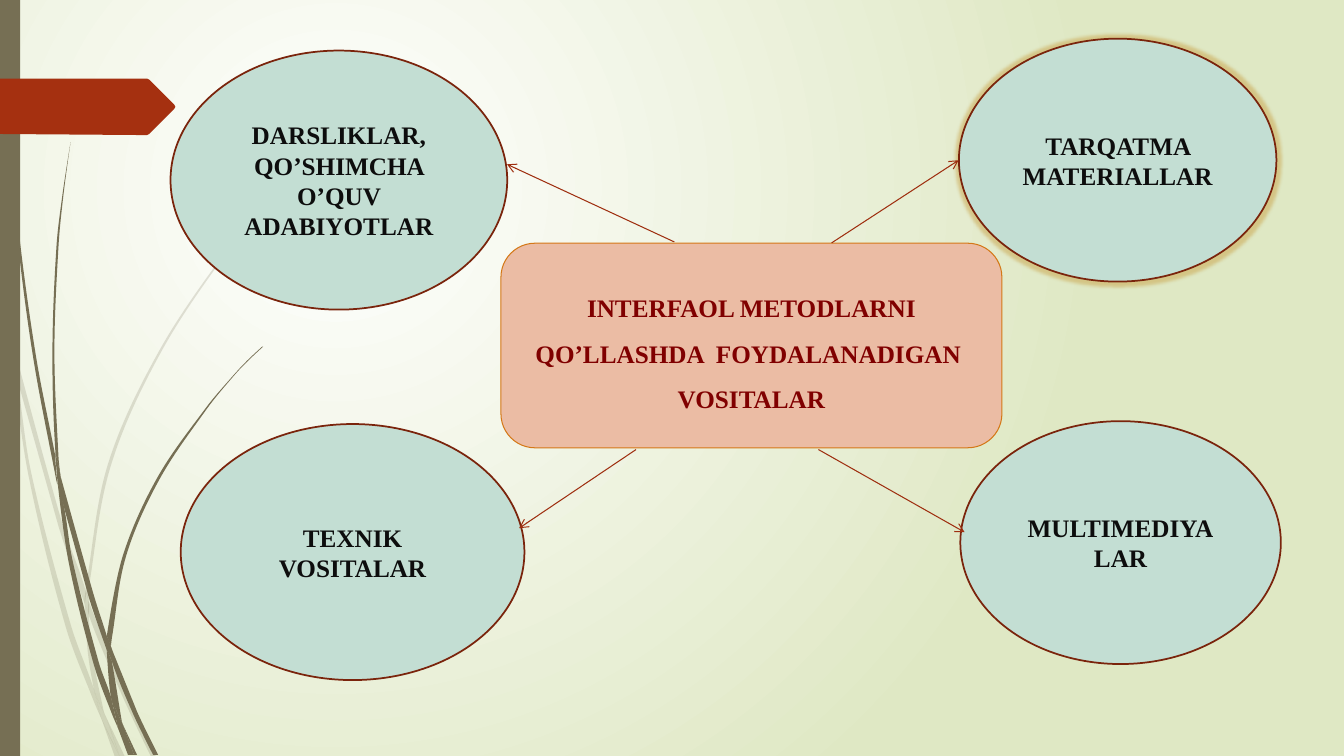
from dataclasses import dataclass
from math import hypot

from lxml.etree import SubElement
from pptx import Presentation
from pptx.dml.color import RGBColor
from pptx.enum.shapes import MSO_CONNECTOR, MSO_SHAPE
from pptx.enum.text import MSO_ANCHOR, PP_ALIGN
from pptx.oxml.ns import qn
from pptx.util import Inches, Pt

COL = ROW = Inches(0.01)
COLS, ROWS = 1333.33, 750
FONT = "Times New Roman"
COLORS = {
    "white": "FFFFFF", "pale": "DFE8C4", "stem": "766F54", "tag": "A53010",
    "topic": "EBBCA4", "topic_edge": "D47817", "topic_text": "800000",
    "tool": "C3DED3", "tool_edge": "7A240C", "tool_text": "0D0D0D",
    "arrow": "9E2E0F", "glow": "CDAE5C",
}
Point = tuple[float, float]


@dataclass(frozen=True)
class Box:
    col: float
    row: float
    cols: float
    rows: float
    kind: MSO_SHAPE
    role: str
    text: str = ""
    edge: float = 0
    spacing: float = 1
    glow: bool = False


@dataclass(frozen=True)
class Outline:
    points: tuple[Point, ...]
    role: str = "stem"
    opacity: int = 100


@dataclass(frozen=True)
class Arrow:
    start: Point
    end: Point


PALE_STEMS = (
    ((11, 350), (9, 322), (0, 282), (0, 299), (10, 344)),
    ((58, 522), (84, 599), (85, 586), (62, 520), (14, 345), (17, 376)),
    ((92, 607), (88, 596), (88, 610), (123, 694), (150, 751), (155, 751), (127, 692)),
    ((119, 751), (124, 751), (105, 711)),
    ((93, 683), (70, 619), (31, 469), (17, 376), (11, 350), (28, 470), (65, 621),
     (92, 693), (101, 714), (99, 707)),
    ((84, 599), (87, 646), (93, 683), (96, 692), (105, 711), (103, 706), (91, 646),
     (88, 610), (88, 608)),
    ((88, 584), (110, 462), (160, 349), (229, 245), (268, 198), (290, 175), (312, 154),
     (312, 153), (289, 175), (268, 197), (228, 244), (158, 348), (107, 461), (85, 584),
     (85, 586), (88, 596)),
    ((101, 714), (114, 751), (119, 751)),
    ((88, 608), (88, 610), (88, 596), (85, 586), (84, 599)),
    ((96, 692), (93, 683), (99, 707), (101, 714), (119, 751), (105, 711)),
)
DARK_STEMS = (
    ((7, 110), (17, 233), (33, 355), (56, 477), (57, 481), (55, 457), (55, 453), (36, 355),
     (19, 232), (8, 109), (5, 48), (4, 0), (3, 0), (4, 48)),
    ((88, 592), (106, 645), (106, 633), (106, 631), (93, 590), (60, 472), (64, 505)),
    ((113, 649), (110, 641), (111, 656), (132, 708), (152, 749), (157, 749), (136, 706)),
    ((110, 691), (98, 657), (72, 556), (64, 505), (57, 477), (68, 557), (93, 659),
     (111, 708), (117, 722), (116, 717)),
    ((60, 472), (58, 453), (54, 349), (58, 245), (63, 193), (70, 141), (62, 193), (56, 245),
     (52, 349), (55, 449)),
    ((133, 749), (136, 749), (122, 719)),
    ((57, 477), (64, 505), (60, 472), (55, 449), (55, 453)),
    ((111, 633), (125, 552), (158, 476), (205, 406), (231, 374), (245, 359), (261, 344),
     (260, 344), (245, 358), (231, 373), (204, 405), (156, 474), (122, 551), (106, 631),
     (110, 641)),
    ((117, 722), (127, 749), (131, 749)),
    ((106, 645), (110, 691), (116, 706), (122, 719), (121, 716), (111, 656), (109, 651)),
    ((106, 645), (109, 651), (111, 656), (110, 641), (106, 631), (106, 633)),
    ((116, 706), (110, 691), (116, 717), (117, 722), (130, 749), (133, 749), (122, 719)),
)
TAG = ((173, 108), (148, 133), (146, 134), (136, 134), (0, 133), (0, 78), (136, 78),
       (146, 78), (148, 79), (173, 104), (174, 106))
SIDEBAR = Box(0, 0, 20, ROWS, MSO_SHAPE.RECTANGLE, "stem")
BOXES = (
    Box(497, 241.3, 497, 203, MSO_SHAPE.ROUNDED_RECTANGLE, "topic",
        "INTERFAOL METODLARNI QO’LLASHDA  FOYDALANADIGAN \nVOSITALAR", 0.75, 1.5),
    Box(169.2, 50.2, 334, 257, MSO_SHAPE.OVAL, "tool",
        "DARSLIKLAR, QO’SHIMCHA O’QUV ADABIYOTLAR", 1.25),
    Box(179.3, 420.7, 341, 254, MSO_SHAPE.OVAL, "tool", "TEXNIK VOSITALAR", 1.25),
    Box(951.3, 38.4, 315, 241, MSO_SHAPE.OVAL, "tool",
        "TARQATMA MATERIALLAR", 1.25, glow=True),
    Box(952.7, 417.8, 318, 241, MSO_SHAPE.OVAL, "tool", "MULTIMEDIYA\nLAR", 1.25),
)
ARROWS = (
    Arrow((825, 241), (951, 159)),
    Arrow((669, 240), (503, 163)),
    Arrow((631, 446), (515, 524)),
    Arrow((812, 446), (957, 528)),
)


def rgb(name: str) -> RGBColor:
    return RGBColor.from_string(COLORS[name])


def paint_background(s) -> None:
    fill = s.background.fill
    fill.gradient()
    for stop, name, position in zip(fill.gradient_stops, ("white", "pale"), (0, 1)):
        stop.color.rgb = rgb(name)
        stop.position = position
    grad = next(s._element.iter(qn("a:gradFill")))
    grad.remove(grad.find(qn("a:lin")))
    path = SubElement(grad, qn("a:path"), path="circle")
    SubElement(path, qn("a:fillToRect"), l="50000", t="50000", r="100000", b="100000")


def tangent(before: Point, at: Point, after: Point) -> Point:
    ax, ay, bx, by = at[0] - before[0], at[1] - before[1], after[0] - at[0], after[1] - at[1]
    if ax * bx + ay * by < 0.85 * hypot(ax, ay) * hypot(bx, by):
        return 0, 0
    span = hypot(ax + bx, ay + by)
    return (ax + bx) / span, (ay + by) / span


def round_outline(sp) -> None:
    path = next(sp._element.iter(qn("a:path")))
    points = [(int(pt.get("x")), int(pt.get("y"))) for pt in path.iter(qn("a:pt"))]
    count = len(points)
    slopes = [tangent(points[i - 1], points[i], points[(i + 1) % count]) for i in range(count)]
    for i, step in enumerate(path.findall(qn("a:lnTo")), 1):
        (x0, y0), (x1, y1) = points[i - 1], points[i]
        (u0, v0), (u1, v1) = slopes[i - 1], slopes[i]
        reach = hypot(x1 - x0, y1 - y0) / 3
        step.tag = qn("a:cubicBezTo")
        handles = ((x0 + u0 * reach, y0 + v0 * reach), (x1 - u1 * reach, y1 - v1 * reach))
        for n, (x, y) in enumerate(handles):
            pt = SubElement(step, qn("a:pt"), x=str(round(x)), y=str(round(y)))
            step.insert(n, pt)


def draw_outline(s, outline: Outline) -> None:
    corners = [(x * COL, y * ROW) for x, y in outline.points]
    builder = s.shapes.build_freeform(*corners[0])
    builder.add_line_segments(corners[1:])
    sp = builder.convert_to_shape()
    sp.shadow.inherit = False
    sp.fill.solid()
    sp.fill.fore_color.rgb = rgb(outline.role)
    sp.line.fill.background()
    if outline.role == "stem":
        round_outline(sp)
    if outline.opacity < 100:
        color = next(sp._element.spPr.iter(qn("a:srgbClr")))
        SubElement(color, qn("a:alpha"), val=str(outline.opacity * 1000))


def draw_box(s, box: Box) -> None:
    sp = s.shapes.add_shape(box.kind, int(box.col * COL), int(box.row * ROW),
                            int(box.cols * COL), int(box.rows * ROW))
    sp.shadow.inherit = False
    sp.fill.solid()
    sp.fill.fore_color.rgb = rgb(box.role)
    if box.edge:
        sp.line.color.rgb = rgb(f"{box.role}_edge")
        sp.line.width = Pt(box.edge)
    else:
        sp.line.fill.background()
    if box.glow:
        effects = sp._element.spPr.find(qn("a:effectLst"))
        glow = SubElement(effects, qn("a:glow"), rad="63500")
        color = SubElement(glow, qn("a:srgbClr"), val=COLORS["glow"])
        SubElement(color, qn("a:alpha"), val="60000")
    if box.text:
        tf = sp.text_frame
        tf.text = box.text
        tf.word_wrap = True
        tf.vertical_anchor = MSO_ANCHOR.MIDDLE
        for p in tf.paragraphs:
            p.alignment = PP_ALIGN.CENTER
            p.line_spacing = box.spacing
            for r in p.runs:
                r.font.name, r.font.size, r.font.bold = FONT, Pt(18), True
                r.font.color.rgb = rgb(f"{box.role}_text")


def draw_arrow(s, arrow: Arrow) -> None:
    ends = (int(v * COL) for v in (*arrow.start, *arrow.end))
    line = s.shapes.add_connector(MSO_CONNECTOR.STRAIGHT, *ends)
    line.line.color.rgb = rgb("arrow")
    line.line.width = Pt(0.75)
    SubElement(line.line._get_or_add_ln(), qn("a:tailEnd"), type="arrow")
    SubElement(line._element.spPr, qn("a:effectLst"))


prs = Presentation()
prs.slide_width, prs.slide_height = int(COLS * COL), ROWS * ROW
s = prs.slides.add_slide(prs.slide_layouts[6])
paint_background(s)
for points in PALE_STEMS:
    draw_outline(s, Outline(points, opacity=20))
for points in DARK_STEMS:
    draw_outline(s, Outline(points))
draw_box(s, SIDEBAR)
draw_outline(s, Outline(TAG, "tag"))
for box in BOXES:
    draw_box(s, box)
for arrow in ARROWS:
    draw_arrow(s, arrow)
prs.save("out.pptx")
